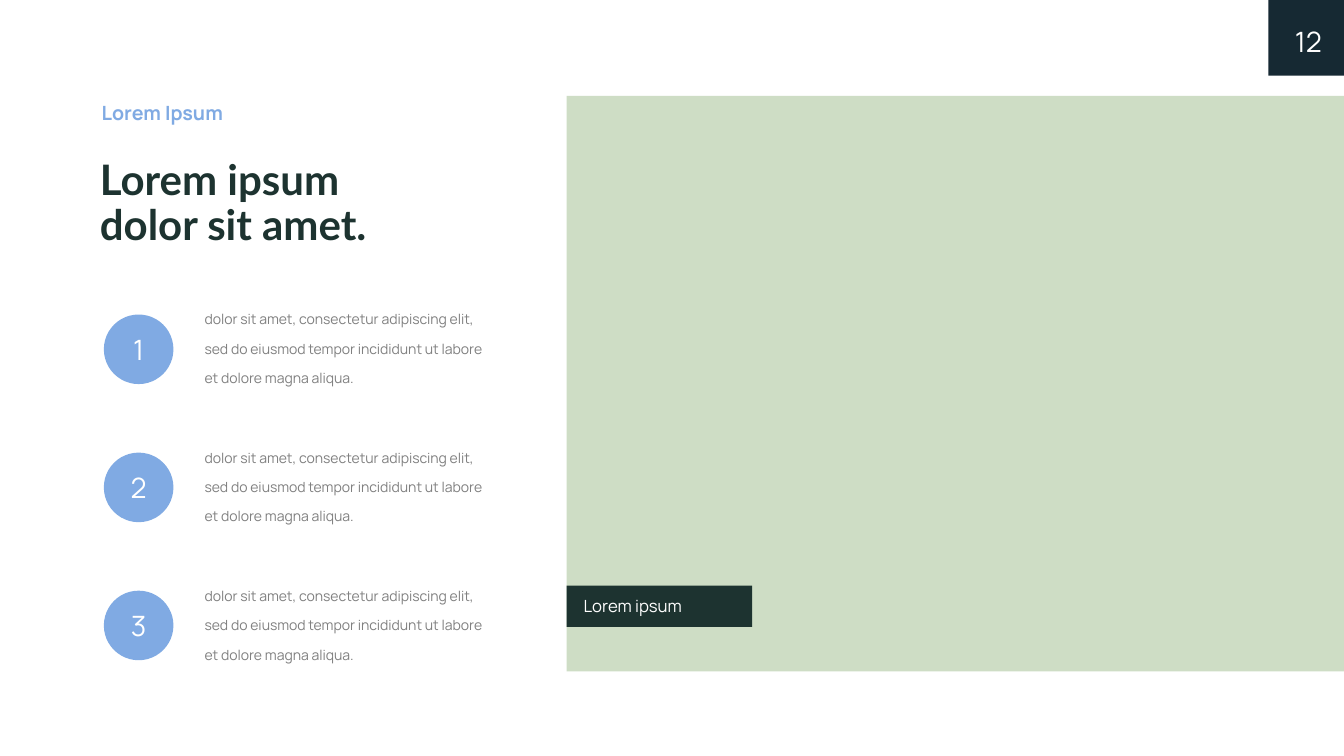
from dataclasses import dataclass

from pptx import Presentation
from pptx.dml.color import RGBColor
from pptx.enum.shapes import MSO_SHAPE
from pptx.enum.text import MSO_ANCHOR, MSO_AUTO_SIZE, PP_ALIGN
from pptx.shapes.autoshape import Shape
from pptx.util import Emu, Pt

RECT, OVAL = MSO_SHAPE.RECTANGLE, MSO_SHAPE.OVAL
TOP, MIDDLE = MSO_ANCHOR.TOP, MSO_ANCHOR.MIDDLE
LEFT, CENTER, RIGHT = PP_ALIGN.LEFT, PP_ALIGN.CENTER, PP_ALIGN.RIGHT
FIT_SHAPE = MSO_AUTO_SIZE.SHAPE_TO_FIT_TEXT

WHITE = RGBColor(0xFF, 0xFF, 0xFF)
BLUE = RGBColor(0x80, 0xAA, 0xE3)
SAGE = RGBColor(0xCE, 0xDD, 0xC5)
NAVY = RGBColor(0x16, 0x29, 0x33)
FOREST = RGBColor(0x1D, 0x33, 0x30)
GRAY = RGBColor(0x80, 0x80, 0x80)

EMU_PER_PX = 9144  # 100 px to the inch
FIRST_ITEM_TOP, ITEM_PITCH = 291, 137
ITEMS = [
    "dolor sit amet, consectetur adipiscing elit, "
    "sed do eiusmod tempor incididunt ut labore et dolore magna aliqua."
] * 3


def px(n: int) -> Emu:
    return Emu(n * EMU_PER_PX)


@dataclass(frozen=True)
class Box:
    left: int
    top: int
    width: int
    height: int

    def emu(self) -> tuple[Emu, Emu, Emu, Emu]:
        return px(self.left), px(self.top), px(self.width), px(self.height)


@dataclass(frozen=True)
class Style:
    size: int
    color: RGBColor
    font: str = "Manrope"
    bold: bool = False
    align: PP_ALIGN = LEFT
    anchor: MSO_ANCHOR = TOP
    line_spacing: float = 1.0


TITLE = Style(30, FOREST, font="Lato", bold=True, line_spacing=0.9)
KICKER = Style(14, BLUE, bold=True)
BODY = Style(10, GRAY, line_spacing=1.75)
BADGE = Style(20, WHITE, align=CENTER, anchor=MIDDLE)
PAGE_NUMBER = Style(20, WHITE, align=RIGHT, anchor=MIDDLE)
CAPTION = Style(12, WHITE)


def write(sp: Shape, text: str, style: Style) -> None:
    tf = sp.text_frame
    tf.word_wrap = True
    tf.vertical_anchor = style.anchor
    tf.text = text
    for p in tf.paragraphs:
        p.alignment = style.align
        p.line_spacing = style.line_spacing
        p.font.name = style.font
        p.font.size = Pt(style.size)
        p.font.bold = style.bold
        p.font.color.rgb = style.color


def add_filled(shapes, kind: MSO_SHAPE, box: Box, color: RGBColor) -> Shape:
    sp = shapes.add_shape(kind, *box.emu())
    sp.shadow.inherit = False
    sp.fill.solid()
    sp.fill.fore_color.rgb = color
    sp.line.fill.background()
    return sp


def add_text(shapes, box: Box, text: str, style: Style) -> Shape:
    sp = shapes.add_textbox(*box.emu())
    write(sp, text, style)
    return sp


def add_item(shapes, number: int, text: str) -> None:
    top = FIRST_ITEM_TOP + (number - 1) * ITEM_PITCH
    group = shapes.add_group_shape()
    body = add_text(group.shapes, Box(193, top, 301, 95), text, BODY)
    body.text_frame.auto_size = FIT_SHAPE
    badge = add_filled(group.shapes, OVAL, Box(103, top + 21, 69, 69), BLUE)
    write(badge, str(number), BADGE)


def main() -> None:
    prs = Presentation()
    prs.slide_width, prs.slide_height = px(1333), px(750)
    slide = prs.slides.add_slide(prs.slide_layouts[5])
    shapes = slide.shapes

    # Green panel and page number
    add_filled(shapes, RECT, Box(562, 95, 771, 571), SAGE)
    add_filled(shapes, RECT, Box(1258, 0, 75, 75), NAVY)
    page = add_text(shapes, Box(1256, 6, 55, 69), "12", PAGE_NUMBER)
    tf = page.text_frame
    tf.margin_left = tf.margin_top = tf.margin_right = tf.margin_bottom = 0

    # Heading
    title = shapes.title
    title.left, title.top, title.width, title.height = Box(89, 153, 406, 102).emu()
    write(title, "Lorem ipsum\ndolor sit amet.", TITLE)
    title.text_frame.auto_size = FIT_SHAPE
    add_text(shapes, Box(91, 95, 404, 34), "Lorem Ipsum", KICKER)

    # Numbered items
    for number, text in enumerate(ITEMS, start=1):
        add_item(shapes, number, text)

    # Panel caption
    add_filled(shapes, RECT, Box(562, 581, 184, 41), FOREST)
    add_text(shapes, Box(569, 586, 161, 30), "Lorem ipsum", CAPTION)

    prs.save("out.pptx")


if __name__ == "__main__":
    main()
